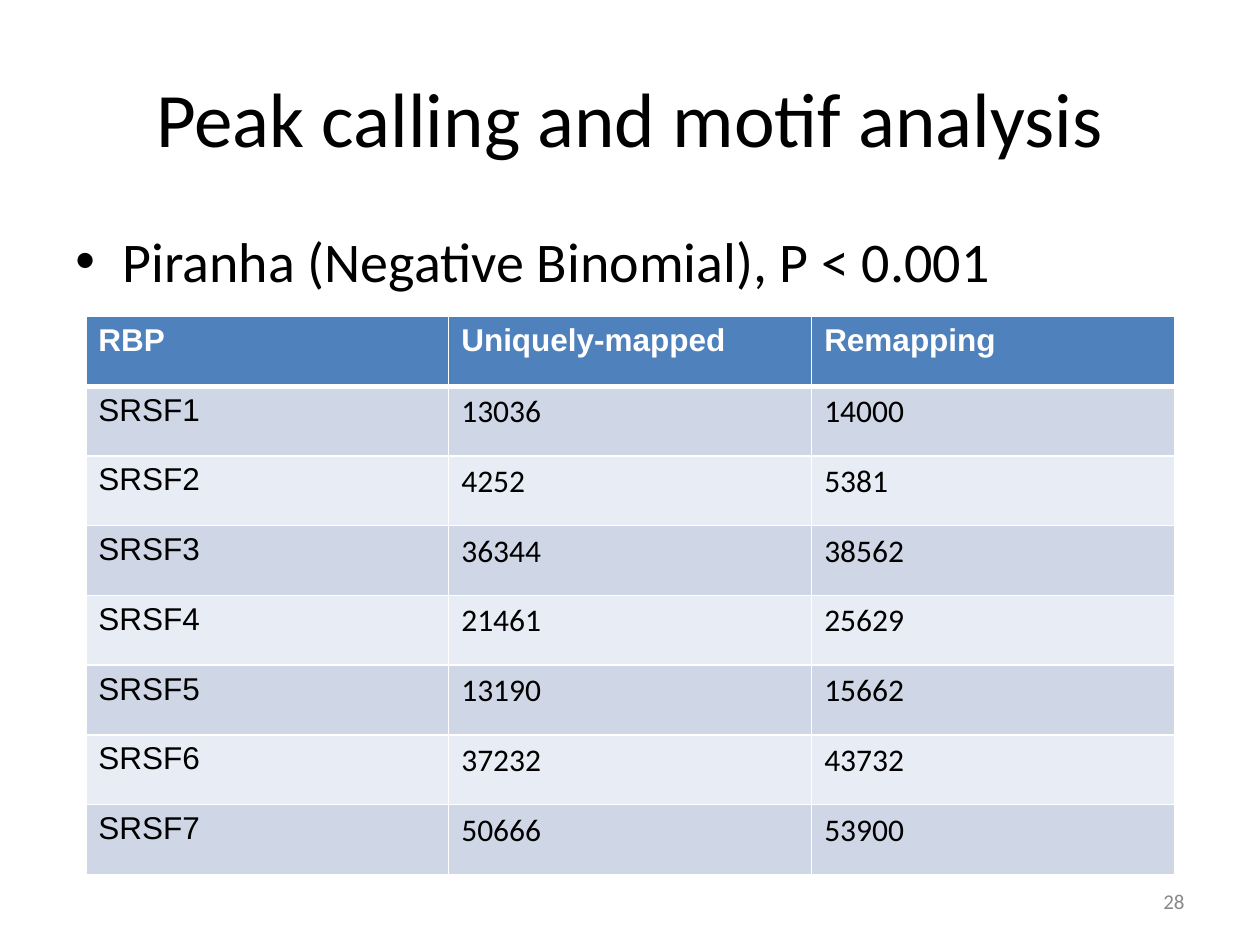
from lxml.etree import SubElement
from pptx import Presentation
from pptx.dml.color import RGBColor
from pptx.enum.text import MSO_ANCHOR, PP_ALIGN
from pptx.oxml.ns import qn
from pptx.util import Cm, Pt

COLORS = {
    "text": "000000",
    "header_text": "FFFFFF",
    "header": "4F81BD",
    "odd_row": "CFD7E7",
    "even_row": "E8ECF4",
    "border": "FFFFFF",
    "page_number": "888888",
}

PEAK_COUNTS = [
    ("RBP", "Uniquely-mapped", "Remapping"),
    ("SRSF1", "13036", "14000"),
    ("SRSF2", "4252", "5381"),
    ("SRSF3", "36344", "38562"),
    ("SRSF4", "21461", "25629"),
    ("SRSF5", "13190", "15662"),
    ("SRSF6", "37232", "43732"),
    ("SRSF7", "50666", "53900"),
]


def write_text(text_frame, text, color, **font_format):
    paragraph = text_frame.paragraphs[0]
    run = paragraph.add_run()
    run.text = text
    run.font.color.rgb = RGBColor.from_string(COLORS[color])
    for name, value in font_format.items():
        setattr(run.font, name, value)
    return paragraph


def add_border(cell, side, width):
    line = SubElement(cell._tc.get_or_add_tcPr(), qn(f"a:{side}"), w=str(Pt(width)))
    fill = SubElement(line, qn("a:solidFill"))
    SubElement(fill, qn("a:srgbClr"), val=COLORS["border"])


presentation = Presentation()
presentation.slide_width, presentation.slide_height = Cm(25.4), Cm(19.05)
slide = presentation.slides.add_slide(presentation.slide_layouts[6])

# Title, bullet and page number
text_boxes = [
    ("Peak calling and motif analysis", (1.27, 0.76, 22.86, 3.18), "text", 44,
     MSO_ANCHOR.MIDDLE, PP_ALIGN.CENTER),
    ("Piranha (Negative Binomial), P < 0.001", (1.27, 4.45, 22.86, 12.57), "text", 32,
     MSO_ANCHOR.TOP, PP_ALIGN.LEFT),
    ("28", (18.2, 17.66, 5.93, 1.01), "page_number", 12,
     MSO_ANCHOR.MIDDLE, PP_ALIGN.RIGHT),
]
paragraphs = []
for text, position, color, size, anchor, alignment in text_boxes:
    text_frame = slide.shapes.add_textbox(*map(Cm, position)).text_frame
    text_frame.word_wrap = True
    text_frame.vertical_anchor = anchor
    paragraph = write_text(text_frame, text, color, name="Calibri", size=Pt(size))
    paragraph.alignment = alignment
    paragraphs.append(paragraph)

bullet_properties = paragraphs[1]._p.get_or_add_pPr()
bullet_properties.set("marL", str(Cm(0.95)))
bullet_properties.set("indent", str(-Cm(0.95)))
SubElement(bullet_properties, qn("a:buFont"), typeface="Arial")
SubElement(bullet_properties, qn("a:buChar"), char="•")

# Peak counts per protein
table = slide.shapes.add_table(
    len(PEAK_COUNTS), len(PEAK_COUNTS[0]), Cm(1.73), Cm(6.38), Cm(21.95), Cm(11.25)
).table
for row_index, row in enumerate(PEAK_COUNTS):
    is_header = row_index == 0
    if is_header:
        fill_color = "header"
    else:
        fill_color = "odd_row" if row_index % 2 else "even_row"
    borders = {
        "lnL": 1,
        "lnR": 1,
        "lnT": 3 if row_index == 1 else 1,
        "lnB": 3 if is_header else 1,
    }
    for column_index, text in enumerate(row):
        cell = table.cell(row_index, column_index)
        for side, width in borders.items():
            add_border(cell, side, width)
        cell.fill.solid()
        cell.fill.fore_color.rgb = RGBColor.from_string(COLORS[fill_color])
        write_text(
            cell.text_frame, text, "header_text" if is_header else "text",
            name="Arial" if is_header or column_index == 0 else "Calibri",
            size=Pt(18), bold=is_header,
        )

presentation.save("out.pptx")
